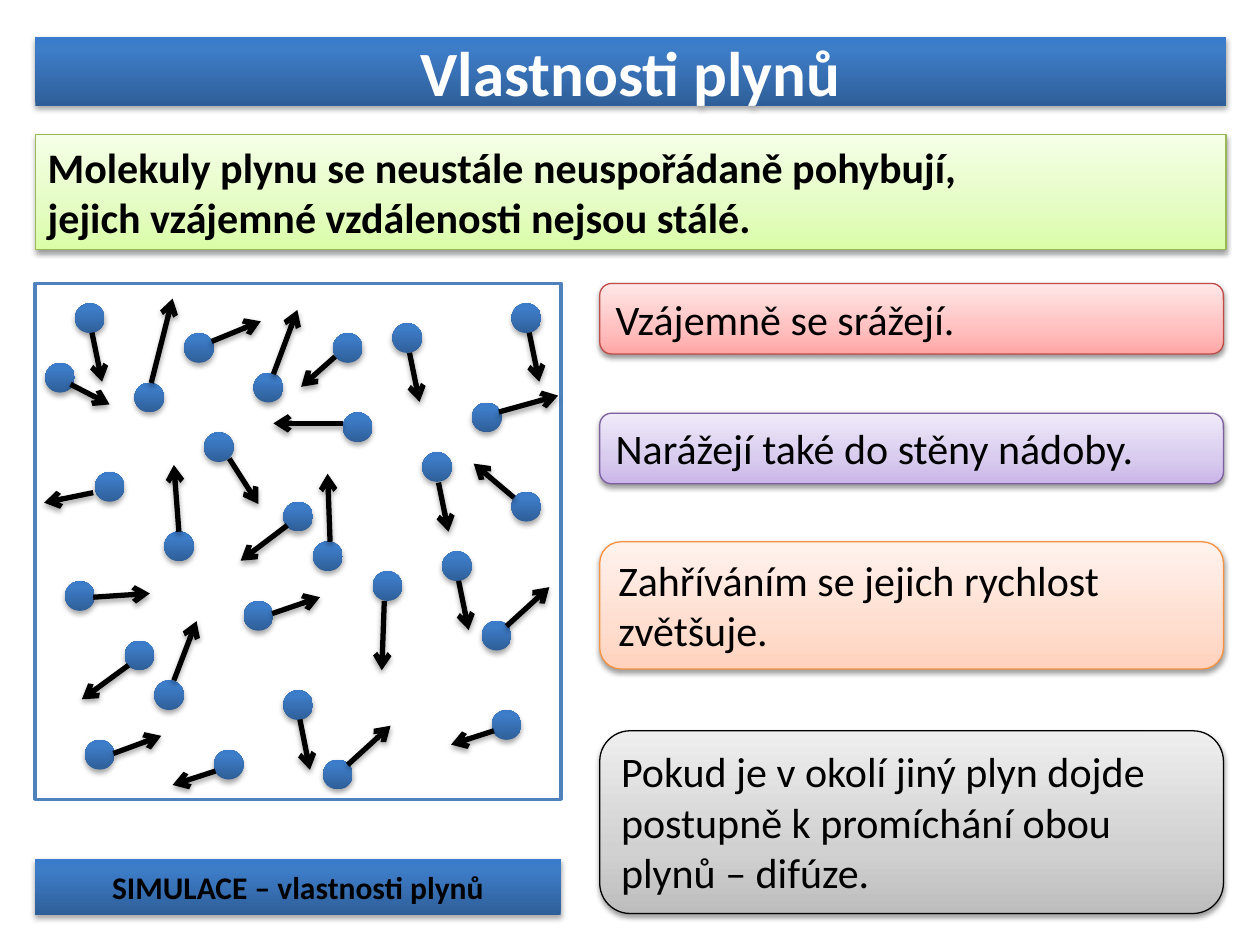
from copy import deepcopy

from lxml import etree
from pptx import Presentation
from pptx.dml.color import RGBColor
from pptx.enum.shapes import MSO_CONNECTOR, MSO_SHAPE
from pptx.enum.text import MSO_ANCHOR, MSO_AUTO_SIZE, PP_ALIGN
from pptx.oxml.ns import qn
from pptx.util import Cm, Inches, Pt

RECT, ROUNDED = MSO_SHAPE.RECTANGLE, MSO_SHAPE.ROUNDED_RECTANGLE
BUTTON, OVAL = MSO_SHAPE.ACTION_BUTTON_CUSTOM, MSO_SHAPE.OVAL
STRAIGHT = MSO_CONNECTOR.STRAIGHT
LEFT, CENTER = PP_ALIGN.LEFT, PP_ALIGN.CENTER
TOP, MIDDLE = MSO_ANCHOR.TOP, MSO_ANCHOR.MIDDLE
GROW, FIXED = MSO_AUTO_SIZE.SHAPE_TO_FIT_TEXT, MSO_AUTO_SIZE.NONE

BLACK = RGBColor(0x00, 0x00, 0x00)
WHITE = RGBColor(0xFF, 0xFF, 0xFF)
PANEL_BLUE = RGBColor(0x4F, 0x81, 0xBD)
GREEN_LINE = RGBColor(0x98, 0xB9, 0x55)
RED_LINE = RGBColor(0xBF, 0x4C, 0x48)
PURPLE_LINE = RGBColor(0x7D, 0x60, 0xA0)
ORANGE_LINE = RGBColor(0xF6, 0x92, 0x40)

# Gradients run from the bottom edge to the top edge
BLUE = [(0, RGBColor(0x2F, 0x5F, 0x99)), (0.8, RGBColor(0x3D, 0x7C, 0xC7)), (1, RGBColor(0x3A, 0x7C, 0xCB))]
GREEN = [(0, RGBColor(0xDA, 0xFD, 0xA7)), (0.35, RGBColor(0xE4, 0xFC, 0xC2)), (1, RGBColor(0xF5, 0xFF, 0xE7))]
RED = [(0, RGBColor(0xFF, 0xA6, 0xA5)), (0.35, RGBColor(0xFF, 0xC0, 0xBF)), (1, RGBColor(0xFF, 0xE7, 0xE7))]
PURPLE = [(0, RGBColor(0xC9, 0xB5, 0xE8)), (0.35, RGBColor(0xD8, 0xCB, 0xEE)), (1, RGBColor(0xF0, 0xEA, 0xF9))]
ORANGE = [(0, RGBColor(0xFF, 0xD2, 0xBD)), (0.35, RGBColor(0xFF, 0xDE, 0xD0)), (1, RGBColor(0xFF, 0xF2, 0xED))]
GRAY = [(0, RGBColor(0xBD, 0xBD, 0xBD)), (0.35, RGBColor(0xD1, 0xD1, 0xD1)), (1, RGBColor(0xEE, 0xEE, 0xEE))]


def add_shadow(shape, distance=1.8, opacity=35):
    effects = etree.SubElement(shape._element.spPr, qn("a:effectLst"))
    shadow = etree.SubElement(effects, qn("a:outerShdw"), blurRad=str(Pt(3.1)),
                              dist=str(Pt(distance)), dir="5400000", rotWithShape="0")
    color = etree.SubElement(shadow, qn("a:srgbClr"), val="000000")
    etree.SubElement(color, qn("a:alpha"), val=str(opacity * 1000))


def paint(shape, gradient, outline=None):
    shape.fill.gradient()
    shape.fill.gradient_angle = 90
    stops = shape._element.spPr.find(qn("a:gradFill")).find(qn("a:gsLst"))
    stops.insert(1, deepcopy(stops[0]))
    for stop, (position, color) in zip(shape.fill.gradient_stops, gradient):
        stop.position = position
        stop.color.rgb = color
    if outline is None:
        shape.line.fill.background()
        add_shadow(shape)
    else:
        shape.line.color.rgb = outline
        shape.line.width = Pt(0.75)
        add_shadow(shape, 1.6, 38)


prs = Presentation()
prs.slide_width, prs.slide_height = Inches(10), Inches(7.5)
slide = prs.slides.add_slide(prs.slide_layouts[5])
shapes = slide.shapes

PERCENT = prs.slide_width / 100  # boxes and arrows, both axes
CELL = Cm(0.2)                   # grid of the gas container
MARGIN, FULL = 2.8, 94.5
COLUMN, COLUMN_WIDTH = 47.6, 49.5
COLS, ROWS, MOLECULE = 53, 52, 3

# Gas container
panel_left, panel_top = int(MARGIN * PERCENT), int(22.5 * PERCENT)
container = shapes.add_shape(RECT, panel_left, panel_top, COLS * CELL, ROWS * CELL)
container.shadow.inherit = False
container.fill.solid()
container.fill.fore_color.rgb = WHITE
container.line.color.rgb = PANEL_BLUE
container.line.width = Pt(2)

# Molecules: column and row in the container grid
molecules = [
    (4, 2), (48, 2), (36, 4), (15, 5), (30, 5), (1, 8), (22, 9), (10, 10),
    (44, 12), (31, 13), (17, 15), (39, 17), (6, 19), (48, 21), (25, 22),
    (13, 25), (28, 26), (41, 27), (34, 29), (3, 30), (21, 32), (45, 34),
    (9, 36), (12, 40), (25, 41), (46, 43), (5, 46), (18, 47), (29, 48),
]
for col, row in molecules:
    molecule = shapes.add_shape(OVAL, panel_left + col * CELL, panel_top + row * CELL,
                                MOLECULE * CELL, MOLECULE * CELL)
    paint(molecule, BLUE)

# Directions of movement: start x, y and end x, y in percent of the slide width
movements = [
    (32.5, 28, 33.3, 31.9), (27.2, 33.6, 21.7, 33.6), (34.8, 38.3, 35.6, 42.2),
    (39.6, 32.7, 44.3, 31.4), (16.8, 27.1, 20.7, 25.5), (18.2, 36.4, 20.5, 40),
    (40.8, 39.5, 37.6, 36.8), (22.8, 41.7, 19.1, 44.5), (26.2, 43, 26, 37.6),
    (42, 26.4, 42.8, 30.3), (7.4, 47.4, 11.9, 47.1), (7.3, 26.4, 8.1, 30.3),
    (40.2, 49.7, 43.6, 46.6), (39.2, 58, 35.8, 59.1), (12, 30.4, 13.7, 23.7),
    (36.4, 46.1, 37.2, 50), (5.6, 30.5, 8.7, 32.1), (7.4, 39.1, 3.5, 39.9),
    (14.2, 42.2, 13.8, 36.9), (26.6, 28.3, 23.9, 30.7), (21.7, 29.7, 23.6, 24.6),
    (21.6, 48.7, 25.4, 47.4), (10.2, 52.8, 6.5, 55.5), (13.8, 54, 15.6, 49.3),
    (27.6, 60.7, 31, 57.6), (17.1, 61.2, 13.7, 62.3), (23.8, 57.1, 24.6, 61.1),
    (9, 59.8, 12.8, 58.4), (30.5, 47.7, 30.3, 53.2),
]
for movement in movements:
    arrow = shapes.add_connector(STRAIGHT, *[int(value * PERCENT) for value in movement])
    arrow.line.color.rgb = BLACK
    arrow.line.width = Pt(3)
    etree.SubElement(arrow._element.spPr.find(qn("a:ln")), qn("a:tailEnd"), type="arrow")
    add_shadow(arrow)

# Title, statement, properties and simulation button
title_look = dict(size=Pt(36), bold=True, color=WHITE, align=CENTER, anchor=MIDDLE, fit=FIXED)
statement_look = dict(size=Pt(24), bold=True, color=BLACK, align=LEFT, anchor=TOP, fit=GROW)
property_look = statement_look | dict(bold=False)
button_look = title_look | dict(size=Pt(18), color=BLACK)
boxes = [
    (None, (MARGIN, 2.9, FULL, 5.5), BLUE, None, title_look, "Vlastnosti plynů"),
    (RECT, (MARGIN, 10.7, FULL, 9.1), GREEN, GREEN_LINE, statement_look,
     "Molekuly plynu se neustále neuspořádaně pohybují,\vjejich vzájemné vzdálenosti nejsou stálé."),
    (ROUNDED, (COLUMN, 22.5, COLUMN_WIDTH, 5.6), RED, RED_LINE, property_look,
     "Vzájemně se srážejí."),
    (ROUNDED, (COLUMN, 32.8, COLUMN_WIDTH, 5.6), PURPLE, PURPLE_LINE, property_look,
     "Narážejí také do stěny nádoby."),
    (ROUNDED, (COLUMN, 43, COLUMN_WIDTH, 10.1), ORANGE, ORANGE_LINE, property_look,
     "Zahříváním se jejich rychlost zvětšuje."),
    (ROUNDED, (COLUMN, 58, COLUMN_WIDTH, 14.5), GRAY, BLACK, property_look,
     "Pokud je v okolí jiný plyn dojde postupně k promíchání obou plynů – difúze."),
    (BUTTON, (MARGIN, 68.2, 41.7, 4.4), BLUE, None, button_look,
     "SIMULACE – vlastnosti plynů"),
]
for kind, place, gradient, outline, look, wording in boxes:
    left, top, width, height = [int(value * PERCENT) for value in place]
    if kind is None:
        box = shapes.title
        box.left, box.top, box.width, box.height = left, top, width, height
    else:
        box = shapes.add_shape(kind, left, top, width, height)
    paint(box, gradient, outline)
    frame = box.text_frame
    frame.text = wording
    frame.word_wrap = True
    frame.auto_size = look["fit"]
    frame.vertical_anchor = look["anchor"]
    paragraph = frame.paragraphs[0]
    paragraph.alignment = look["align"]
    for run in paragraph.runs:
        run.font.name = "Calibri"
        run.font.color.rgb = look["color"]
        for attribute in ("size", "bold"):
            setattr(run.font, attribute, look[attribute])

prs.save("out.pptx")
